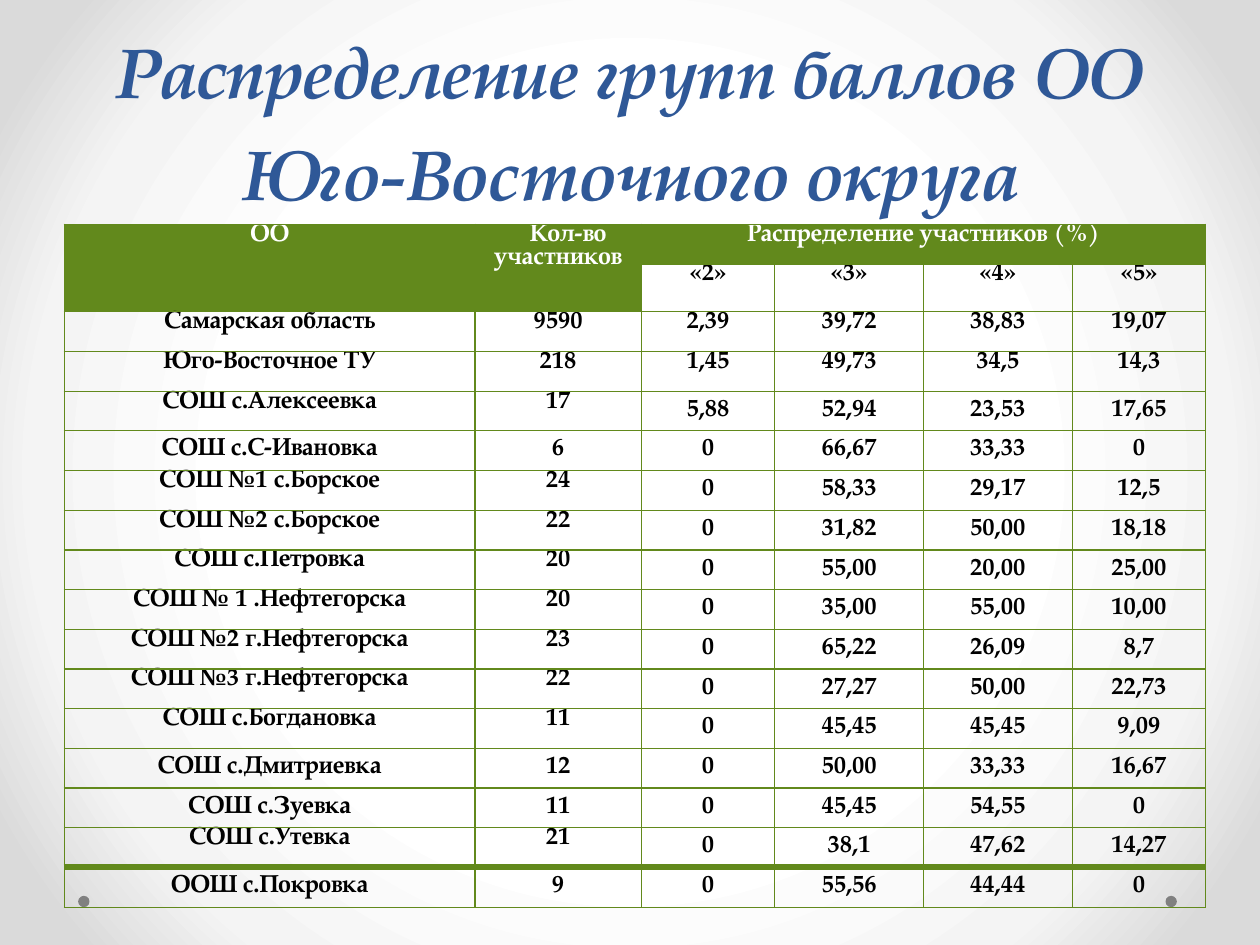
from lxml.etree import SubElement
from pptx import Presentation
from pptx.dml.color import RGBColor
from pptx.enum.shapes import MSO_SHAPE
from pptx.enum.text import MSO_ANCHOR, PP_ALIGN
from pptx.oxml import parse_xml
from pptx.oxml.ns import nsdecls, qn
from pptx.util import Inches, Pt

TITLE = "Распределение групп баллов ОО Юго-Восточного округа"
GROUP_HEADS = ["ОО", "Кол-во участников", "Распределение участников (%)"]
MARK_HEADS = ["«2»", "«3»", "«4»", "«5»"]
SCHOOLS = [
    ("Самарская область", "9590", "2,39", "39,72", "38,83", "19,07"),
    ("Юго-Восточное ТУ", "218", "1,45", "49,73", "34,5", "14,3"),
    ("СОШ с.Алексеевка", "17", "5,88", "52,94", "23,53", "17,65"),
    ("СОШ с.С-Ивановка", "6", "0", "66,67", "33,33", "0"),
    ("СОШ №1 с.Борское", "24", "0", "58,33", "29,17", "12,5"),
    ("СОШ №2 с.Борское", "22", "0", "31,82", "50,00", "18,18"),
    ("СОШ с.Петровка", "20", "0", "55,00", "20,00", "25,00"),
    ("СОШ № 1 .Нефтегорска", "20", "0", "35,00", "55,00", "10,00"),
    ("СОШ №2 г.Нефтегорска", "23", "0", "65,22", "26,09", "8,7"),
    ("СОШ №3 г.Нефтегорска", "22", "0", "27,27", "50,00", "22,73"),
    ("СОШ с.Богдановка", "11", "0", "45,45", "45,45", "9,09"),
    ("СОШ с.Дмитриевка", "12", "0", "50,00", "33,33", "16,67"),
    ("СОШ с.Зуевка", "11", "0", "45,45", "54,55", "0"),
    ("СОШ с.Утевка", "21", "0", "38,1", "47,62", "14,27"),
    ("ООШ с.Покровка", "9", "0", "55,56", "44,44", "0"),
]
MIDDLE_LABELS = {"СОШ с.С-Ивановка", "СОШ с.Дмитриевка", "СОШ с.Зуевка", "ООШ с.Покровка"}
REGION_ROWS = 2   # the region totals come before the schools
HEAD_ROWS = 2

FONT = "TeX Gyre Pagella"
BLUE = RGBColor(0x2F, 0x58, 0x97)
GREEN = RGBColor(0x62, 0x89, 0x1C)
GRAY = RGBColor(0x80, 0x80, 0x80)
WHITE = RGBColor(0xFF, 0xFF, 0xFF)
BLACK = RGBColor(0, 0, 0)
BACKGROUND_STOPS = [(50, "FFFFFF"), (76, "F4F4F4"), (92, "DADADA")]

COLUMN_WIDTHS = [3.26, 1.32, 1.06, 1.18, 1.18, 1.06]
ROW_HEIGHT, MARK_ROW_HEIGHT = 0.315, 0.38
TABLE_LEFT, TABLE_TOP = 0.51, 1.78


def set_background(slide):
    stops = "".join(f'<a:gs pos="{share * 1000}"><a:srgbClr val="{color}"/></a:gs>'
                    for share, color in BACKGROUND_STOPS)
    slide.element.cSld.insert(0, parse_xml(
        f'<p:bg {nsdecls("p", "a")}><p:bgPr><a:gradFill><a:gsLst>{stops}</a:gsLst>'
        '<a:path path="circle"><a:fillToRect l="50000" t="50000" r="50000" b="50000"/></a:path>'
        '</a:gradFill><a:effectLst/></p:bgPr></p:bg>'))


def style_text(frame, size, color, spacing, italic=None):
    for para in frame.paragraphs:
        para.alignment = PP_ALIGN.CENTER
        para.line_spacing = Pt(spacing)
        for span in para.runs:
            font = span.font
            font.name, font.size, font.bold, font.italic = FONT, Pt(size), True, italic
            font.color.rgb = color


def set_borders(cell, widths):
    props = cell._tc.get_or_add_tcPr()
    for position, (side, width) in enumerate(widths.items()):
        line = SubElement(props, qn(f"a:ln{side}"), w=str(Pt(width)))
        fill = SubElement(line, qn("a:solidFill"))
        SubElement(fill, qn("a:srgbClr"), val=str(GREEN))
        props.insert(position, line)


def style_cell(cell, row, column, last_row):
    header = row == 0 or (row < HEAD_ROWS and column < 2)
    cell.margin_left = cell.margin_right = cell.margin_top = cell.margin_bottom = 0
    if header:
        cell.fill.solid()
        cell.fill.fore_color.rgb = GREEN
    else:
        cell.fill.background()
    school = row >= HEAD_ROWS + REGION_ROWS
    label = SCHOOLS[row - HEAD_ROWS][0] if school else ""
    middle = school and (column > 1 or label in MIDDLE_LABELS)
    cell.vertical_anchor = MSO_ANCHOR.MIDDLE if middle else MSO_ANCHOR.TOP
    style_text(cell.text_frame, 14, WHITE if header else BLACK, 13.2)
    # A thick rule sets off the last school
    set_borders(cell, {"L": 0.75, "R": 0.75,
                       "T": 4 if row == last_row else 0.75,
                       "B": 4 if row == last_row - 1 else 0.75})


def add_score_table(slide):
    rows = [GROUP_HEADS + [""] * 3, ["", ""] + MARK_HEADS, *SCHOOLS]
    heights = [ROW_HEIGHT] * len(rows)
    heights[1] = MARK_ROW_HEIGHT
    table = slide.shapes.add_table(
        len(rows), len(COLUMN_WIDTHS), Inches(TABLE_LEFT), Inches(TABLE_TOP),
        Inches(sum(COLUMN_WIDTHS)), Inches(sum(heights))).table
    for column, width in zip(table.columns, COLUMN_WIDTHS):
        column.width = Inches(width)
    for line, height in zip(table.rows, heights):
        line.height = Inches(height)
    for r, values in enumerate(rows):
        for c, value in enumerate(values):
            cell = table.cell(r, c)
            cell.text = value
            style_cell(cell, r, c, len(rows) - 1)
    for column in (0, 1):
        table.cell(0, column).merge(table.cell(1, column))
    table.cell(0, 2).merge(table.cell(0, 5))
    # Indent of the participants heading
    heading = table.cell(0, 1).text_frame.paragraphs[0]._p.get_or_add_pPr()
    heading.set("marL", "0")
    heading.set("indent", str(Inches(0.16)))


def main():
    deck = Presentation()
    deck.slide_width, deck.slide_height = Inches(10), Inches(7.5)
    slide = deck.slides.add_slide(deck.slide_layouts[5])
    set_background(slide)

    # Title
    title = slide.shapes.title
    title.left, title.top, title.width, title.height = Inches(0.5), 0, Inches(9), Inches(1.75)
    title.text_frame.text = TITLE
    title.text_frame.vertical_anchor = MSO_ANCHOR.BOTTOM
    style_text(title.text_frame, 40, BLUE, 58, italic=True)

    # Corner dots
    for left in (0.62, 9.25):
        dot = slide.shapes.add_shape(MSO_SHAPE.OVAL, Inches(left), Inches(7.11),
                                     Inches(0.09), Inches(0.09))
        dot.shadow.inherit = False
        dot.fill.solid()
        dot.fill.fore_color.rgb = GRAY
        dot.line.fill.background()

    add_score_table(slide)
    deck.save("out.pptx")


if __name__ == "__main__":
    main()
